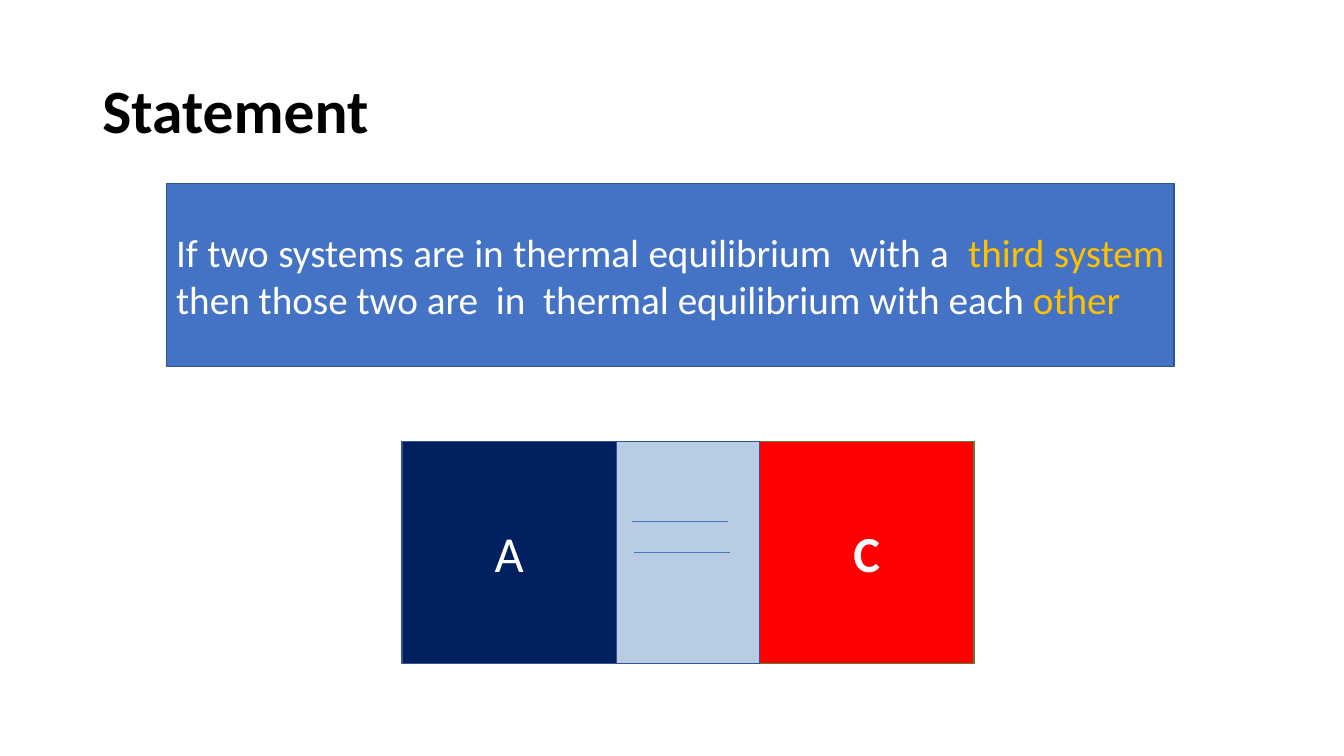
import dataclasses
import pptx
import pptx.dml.color
import pptx.enum.shapes
import pptx.enum.text
import pptx.oxml
import pptx.oxml.ns
import pptx.util

Cm = pptx.util.Cm
Pt = pptx.util.Pt
ALIGN = pptx.enum.text.PP_ALIGN


@dataclasses.dataclass(frozen=True)
class Theme:
    font: str = "Calibri"
    title_size: int = 44
    body_size: int = 28
    label_size: int = 36
    black: str = "000000"
    white: str = "FFFFFF"
    gold: str = "FFC000"
    blue: str = "4472C4"
    edge: str = "325491"
    navy: str = "002060"
    red: str = "FF0000"
    green: str = "538035"
    wall: str = "4F81BD"


THEME = Theme()


def rgb(value):
    return pptx.dml.color.RGBColor.from_string(value)


def add_sub(parent, tag, **attrs):
    child = pptx.oxml.parse_xml(f"<{tag} {pptx.oxml.ns.nsdecls('a')}/>")
    for name, value in attrs.items():
        child.set(name, value)
    parent.append(child)


def write_text(tf, *runs, size, color=THEME.white, bold=False,
               align=ALIGN.LEFT, spacing=1.0):
    tf.word_wrap = True
    tf.vertical_anchor = pptx.enum.text.MSO_ANCHOR.MIDDLE
    p = tf.paragraphs[0]
    p.alignment = align
    p.line_spacing = spacing
    for text, run_color in runs:
        r = p.add_run()
        r.text = text
        r.font.name = THEME.font
        r.font.size = Pt(size)
        r.font.bold = bold
        r.font.color.rgb = rgb(run_color or color)


def add_box(s, left, top, width, height, fill, line=THEME.edge, alpha=None):
    sp = s.shapes.add_shape(pptx.enum.shapes.MSO_SHAPE.RECTANGLE,
                            Cm(left), Cm(top), Cm(width), Cm(height))
    sp.shadow.inherit = False
    sp.fill.solid()
    sp.fill.fore_color.rgb = rgb(fill)
    if alpha is not None:
        color = sp.fill._xPr.find(".//" + pptx.oxml.ns.qn("a:srgbClr"))
        add_sub(color, "a:alpha", val=str(alpha * 1000))
    sp.line.color.rgb = rgb(line)
    sp.line.width = Pt(1)
    return sp


def add_rule(s, left, top, width):
    cn = s.shapes.add_connector(pptx.enum.shapes.MSO_CONNECTOR.STRAIGHT,
                                Cm(left), Cm(top), Cm(left + width), Cm(top))
    cn.line.color.rgb = rgb(THEME.blue)
    cn.line.width = Pt(0.5)
    add_sub(cn._element.spPr, "a:effectLst")


def add_title(s, text):
    sp = s.shapes.add_textbox(Cm(2.33), Cm(1.01), Cm(29.21), Cm(3.68))
    write_text(sp.text_frame, (text, None), size=THEME.title_size,
               color=THEME.black, bold=True, spacing=0.9)


def add_statement(s):
    sp = add_box(s, 4.19, 4.63, 25.4, 4.6, THEME.blue)
    write_text(sp.text_frame,
               ("If two systems are in thermal equilibrium  with a  ", None),
               ("third system ", THEME.gold),
               ("then those two are  in  thermal equilibrium with each ", None),
               ("other ", THEME.gold),
               size=THEME.body_size, align=ALIGN.JUSTIFY)


def add_systems(s):
    left, top, height = 10.13, 11.13, 5.59
    system_width, wall_width = 5.41, 3.6
    wall_left = left + system_width

    def add_system(label, x, fill, line, bold=False):
        sp = add_box(s, x, top, system_width, height, fill, line)
        write_text(sp.text_frame, (label, None), size=THEME.label_size,
                   bold=bold, align=ALIGN.CENTER)

    add_system("A", left, THEME.navy, THEME.edge)
    for x, y in ((15.93, 13.13), (15.98, 13.92)):
        add_rule(s, x, y, 2.41)
    add_system("C", wall_left + wall_width, THEME.red, THEME.green, bold=True)
    add_box(s, wall_left, top, wall_width, height, THEME.wall, alpha=40)


def main():
    prs = pptx.Presentation()
    prs.slide_width = Cm(33.87)
    prs.slide_height = Cm(19.05)
    s = prs.slides.add_slide(prs.slide_layouts[6])
    add_title(s, "Statement")
    add_statement(s)
    add_systems(s)
    prs.save("out.pptx")


if __name__ == "__main__":
    main()
